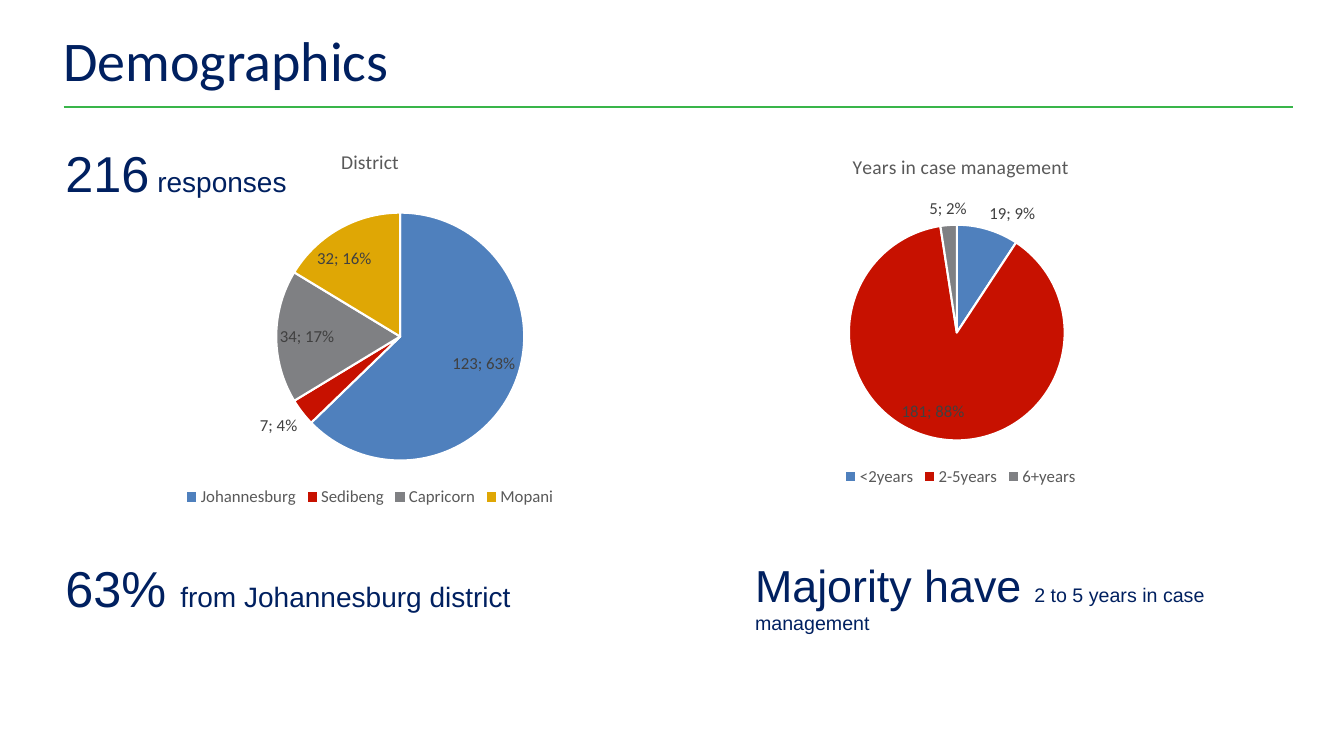
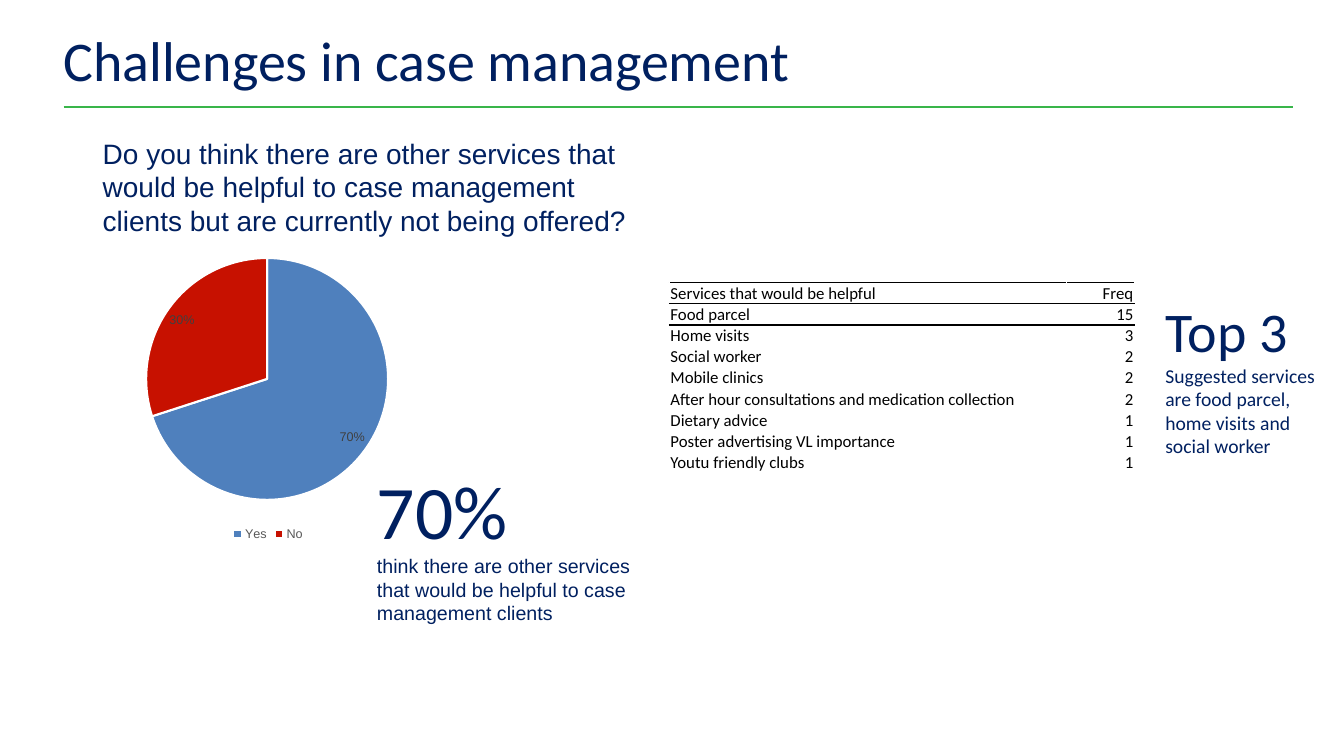
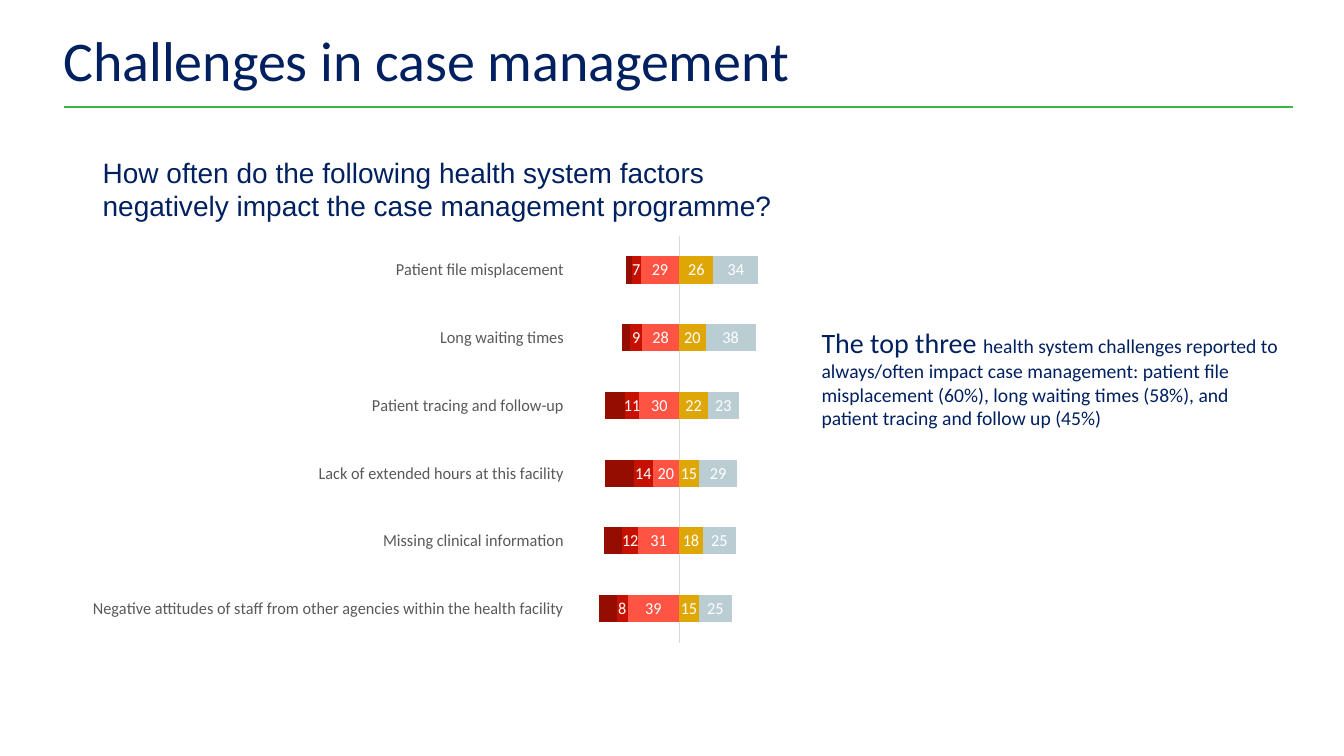
from lxml import etree
from pptx import Presentation
from pptx.chart.data import CategoryChartData
from pptx.dml.color import RGBColor
from pptx.enum import chart as ch, shapes, text
from pptx.oxml import parse_xml
from pptx.oxml.ns import nsdecls, qn
from pptx.util import Inches, Pt

NAVY, GREEN, BLACK, WHITE = "002060", "39B54A", "000000", "FFFFFF"
GREY, LABEL_GREY, AXIS_GREY = "595959", "404040", "D9D9D9"
SLICES = ["4F80BD", "C71100", "7F8083", "DFA705"]


def rgb(value):
    return RGBColor.from_string(value)


def set_attrs(obj, values):
    for name, value in values.items():
        setattr(obj, name, value)


def set_font(font, size, color, name="Calibri"):
    set_attrs(font, {"size": Pt(size), "name": name, "bold": False})
    font.color.rgb = rgb(color)


def set_plot_layout(chart, x, y, w, h):
    """Fix the inner plot area, given as fractions of the chart."""
    area = chart._chartSpace.find(".//" + qn("c:plotArea"))
    for old in area.findall(qn("c:layout")):
        area.remove(old)
    sizes = "".join(f'<c:{tag} val="{value:.4f}"/>'
                    for tag, value in zip("xywh", (x, y, w, h)))
    area.insert(0, parse_xml(
        f'<c:layout {nsdecls("c")}><c:manualLayout><c:layoutTarget val="inner"/>'
        f'<c:xMode val="edge"/><c:yMode val="edge"/>{sizes}'
        '</c:manualLayout></c:layout>'))


def set_border(cell, side, width):
    """Draw one cell border; side is T or B."""
    cell._tc.get_or_add_tcPr().insert(0 if side == "T" else 1, parse_xml(
        f'<a:ln{side} {nsdecls("a")} w="{Pt(width)}"><a:solidFill>'
        f'<a:srgbClr val="{BLACK}"/></a:solidFill></a:ln{side}>'))


class Deck:
    """Holds the shared style and the slide being built."""

    def __init__(self):
        self.prs = Presentation()
        self.prs.slide_width, self.prs.slide_height = Inches(13.33), Inches(7.5)
        self.s = None

    def slide(self, title):
        self.s = self.prs.slides.add_slide(self.prs.slide_layouts[6])
        self.rule(0.63, 1.06, 12.82)
        self.text(0.53, 0.2, 11.91, 0.86, [[(title, 40, "Calibri")]])

    def rule(self, left, top, right):
        line = self.s.shapes.add_connector(
            shapes.MSO_CONNECTOR.STRAIGHT,
            Inches(left), Inches(top), Inches(right), Inches(top))
        line.line.color.rgb, line.line.width = rgb(GREEN), Pt(1.5)
        etree.SubElement(line._element.spPr, qn("a:effectLst"))

    def text(self, x, y, w, h, paragraphs):
        """Each paragraph is a list of (words, size, font) runs."""
        sp = self.s.shapes.add_textbox(Inches(x), Inches(y), Inches(w), Inches(h))
        tf = sp.text_frame
        set_attrs(tf, {"word_wrap": True,
                       "auto_size": text.MSO_AUTO_SIZE.SHAPE_TO_FIT_TEXT})
        for i, runs in enumerate(paragraphs):
            p = tf.add_paragraph() if i else tf.paragraphs[0]
            for words, size, font in runs:
                r = p.add_run()
                r.text = words
                set_font(r.font, size, NAVY, font)

    def chart(self, kind, box, cats, series, size, font):
        data = CategoryChartData()
        data.categories = cats
        for i, values in enumerate(series, 1):
            data.add_series(f"Series {i}", values)
        chart = self.s.shapes.add_chart(kind, *map(Inches, box), data).chart
        set_font(chart.font, size, BLACK, font)
        chart.has_title = chart.has_legend = False
        return chart

    def pie(self, box, center, radius, values, title=None, size=12,
            font="Calibri", show_value=True):
        """center and radius are in inches on the slide."""
        chart = self.chart(ch.XL_CHART_TYPE.PIE, box, list(values),
                           [values.values()], size, font)
        x, y, w, h = box
        set_plot_layout(chart, (center[0] - radius - x) / w,
                        (center[1] - radius - y) / h, 2 * radius / w, 2 * radius / h)
        if title:
            chart.has_title = True
            r = chart.chart_title.text_frame.paragraphs[0].add_run()
            r.text = title
            set_font(r.font, 14, GREY, font)
        chart.has_legend = True
        set_attrs(chart.legend, {"position": ch.XL_LEGEND_POSITION.BOTTOM,
                                 "include_in_layout": False})
        set_font(chart.legend.font, size, GREY, font)

        plot = chart.plots[0]
        plot.vary_by_categories = True
        for i, color in enumerate(SLICES[:len(values)]):
            fmt = plot.series[0].points[i].format
            fmt.fill.solid()
            fmt.fill.fore_color.rgb = rgb(color)
            fmt.line.color.rgb, fmt.line.width = rgb(WHITE), Pt(1.5)
        labels = plot.series[0].data_labels
        set_attrs(labels, {"show_value": show_value, "show_percentage": True,
                           "position": ch.XL_LABEL_POSITION.BEST_FIT})
        set_font(labels.font, size, LABEL_GREY, font)
        labels._element.find(qn("c:showBubbleSize")).addnext(
            parse_xml(f'<c:separator {nsdecls("c")}>; </c:separator>'))

    def diverging_bars(self, box, layout, cats, series, limit):
        """series lists (color, label format or None, values)."""
        chart = self.chart(ch.XL_CHART_TYPE.BAR_STACKED, box, cats,
                           [values for _, _, values in series], 12, "Calibri")
        set_plot_layout(chart, *layout)
        plot = chart.plots[0]
        set_attrs(plot, {"gap_width": 150, "overlap": 100,
                         "vary_by_categories": False})
        set_attrs(chart.value_axis, {
            "minimum_scale": -limit, "maximum_scale": limit,
            "has_major_gridlines": False, "visible": False})
        axis = chart.category_axis
        set_attrs(axis, {"tick_label_position": ch.XL_TICK_LABEL_POSITION.LOW,
                         "major_tick_mark": ch.XL_TICK_MARK.NONE,
                         "minor_tick_mark": ch.XL_TICK_MARK.NONE})
        set_font(axis.tick_labels.font, 12, GREY)
        axis.format.line.color.rgb, axis.format.line.width = rgb(AXIS_GREY), Pt(0.75)
        for ser, (color, number_format, _) in zip(plot.series, series):
            ser.invert_if_negative = False
            ser.format.fill.solid()
            ser.format.fill.fore_color.rgb = rgb(color)
            if number_format:
                set_attrs(ser.data_labels, {
                    "show_value": True, "number_format": number_format,
                    "number_format_is_linked": False,
                    "position": ch.XL_LABEL_POSITION.CENTER})
                set_font(ser.data_labels.font, 12, WHITE)

    def table(self, x, y, widths, row_height, rows):
        table = self.s.shapes.add_table(
            len(rows), len(widths), Inches(x), Inches(y),
            Inches(sum(widths)), Inches(row_height * len(rows))).table
        set_attrs(table, {"first_row": False, "horz_banding": False})
        for col, width in zip(table.columns, widths):
            col.width = Inches(width)
        for i, row in enumerate(rows):
            table.rows[i].height = Inches(row_height)
            for j, words in enumerate(row):
                cell = table.cell(i, j)
                cell.fill.background()
                anchor = text.MSO_ANCHOR.BOTTOM if i else text.MSO_ANCHOR.MIDDLE
                set_attrs(cell, {
                    "margin_left": Inches(0.01), "margin_right": Inches(0.01),
                    "margin_top": Inches(0.01), "margin_bottom": 0,
                    "vertical_anchor": anchor})
                p = cell.text_frame.paragraphs[0]
                p.alignment = text.PP_ALIGN.RIGHT if j else text.PP_ALIGN.LEFT
                r = p.add_run()
                r.text = str(words)
                set_font(r.font, 12, BLACK)
                if i == 0:
                    set_border(cell, "T", 1)
                    set_border(cell, "B", 1.5)
                elif i == 1:
                    set_border(cell, "T", 1.5)


def demographics(deck):
    deck.slide("Demographics")
    deck.pie((0.4, 1.31, 6.54, 3.76), (3.97, 3.34), 1.23,
             {"Johannesburg": 123, "Sedibeng": 7, "Capricorn": 34, "Mopani": 32},
             "District")
    deck.text(0.55, 1.36, 2.79, 0.71,
              [[("216", 36, "Arial"), (" responses", 20, "Arial")]])
    deck.text(0.55, 5.48, 5.36, 0.71,
              [[("63% ", 36, "Arial"), ("from Johannesburg district", 20, "Arial")]])
    deck.pie((7.08, 1.36, 4.9, 3.51), (9.49, 3.3), 1.07,
             {"<2years": 19, "2-5years": 181, "6+years": 5},
             "Years in case management")
    deck.text(7.39, 5.48, 4.77, 0.88,
              [[("Majority have ", 32, "Arial"),
                ("2 to 5 years in case management", 14, "Arial")]])


def other_services(deck):
    deck.slide("Challenges in case management")
    deck.text(0.92, 1.3, 5.44, 1.11, [[(
        "Do you think there are other services that would be helpful to case "
        "management clients but are currently not being offered?", 20, "Arial")]])
    deck.pie((0.16, 2.41, 5, 3), (2.65, 3.76), 1.2, {"Yes": 70, "No": 30},
             size=9, font="Arial", show_value=False)
    deck.table(6.64, 2.8, [3.94, 0.67], 0.21, [
        ("Services that would be helpful", "Freq"),
        ("Food parcel", 15),
        ("Home visits", 3),
        ("Social worker", 2),
        ("Mobile clinics", 2),
        ("After hour consultations and medication collection", 2),
        ("Dietary advice", 1),
        ("Poster advertising VL importance", 1),
        ("Youtu friendly clubs", 1)])
    deck.text(3.64, 4.55, 2.89, 1.72, [
        [("70%", 54, "Calibri")],
        [("think there are other services that would be helpful to case "
          "management clients", 14, "Arial")]])
    deck.text(11.46, 2.89, 1.8, 1.72, [
        [("Top 3", 40, "Calibri")],
        [("Suggested services are food parcel, home visits and social worker",
          14, "Calibri")]])


def health_system_factors(deck):
    deck.slide("Challenges in case management")
    deck.diverging_bars(
        (0.92, 2.26, 7, 4.2), (0.67, 0.02, 0.31, 0.96),
        ["Negative attitudes of staff from other agencies within the health facility",
         "Missing clinical information", "Lack of extended hours at this facility",
         "Patient tracing and follow-up", "Long waiting times",
         "Patient file misplacement"],
        [("FF5444", "0;0", [-39, -31, -20, -30, -28, -29]),
         ("C71100", "0;0", [-8, -12, -14, -11, -9, -7]),
         ("950D00", None, [-14, -14, -22, -15, -6, -4]),
         ("DFA705", "0", [15, 18, 15, 22, 20, 26]),
         ("BACDD3", "0", [25, 25, 29, 23, 38, 34])], 80)
    deck.text(0.92, 1.49, 7.43, 0.77, [[(
        "How often do the following health system factors negatively impact "
        "the case management programme?", 20, "Arial")]])
    deck.text(8.05, 3.18, 4.83, 1.38, [[
        ("The top three ", 20, "Calibri"),
        ("health system challenges reported to always/often impact case "
         "management: patient file misplacement (60%), long waiting times (58%), "
         "and patient tracing and follow up (45%)", 14, "Calibri")]])


def main():
    deck = Deck()
    for build in (demographics, other_services, health_system_factors):
        build(deck)
    deck.prs.save("out.pptx")


if __name__ == "__main__":
    main()
